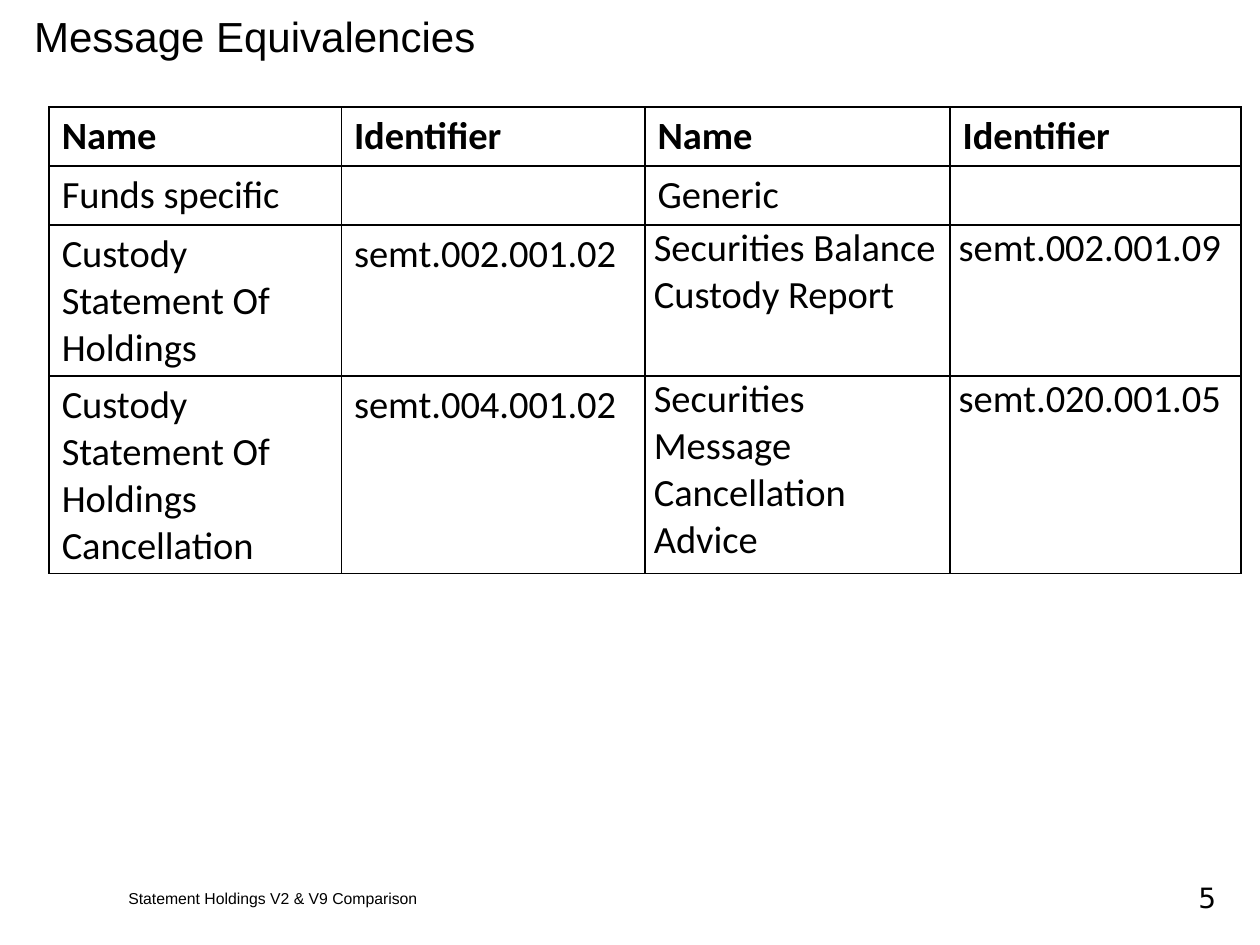
from lxml.etree import SubElement
from pptx import Presentation
from pptx.dml.color import RGBColor
from pptx.enum.text import MSO_ANCHOR, PP_ALIGN
from pptx.oxml.ns import qn
from pptx.util import Inches, Pt

BLACK = RGBColor(0x00, 0x00, 0x00)
WHITE = RGBColor(0xFF, 0xFF, 0xFF)
SLIDE_WIDTH, SLIDE_HEIGHT = Inches(10), Inches(7.5)
COLUMN_WIDTHS = (2.32, 2.41, 2.42, 2.31)
ROW_HEIGHT = 0.41
GENERIC_COLUMN = 2
FIRST_MESSAGE_ROW = 2
EQUIVALENCIES = (
    ("Name", "Identifier", "Name", "Identifier"),
    ("Funds specific", "", "Generic", ""),
    ("Custody Statement Of Holdings", "semt.002.001.02",
     "Securities Balance Custody Report", "semt.002.001.09"),
    ("Custody Statement Of Holdings Cancellation", "semt.004.001.02",
     "Securities Message Cancellation Advice", "semt.020.001.05"),
)


def add_run(paragraph, wording, font_name, size, bold=False):
    """Append one formatted run to a paragraph."""
    run = paragraph.add_run()
    run.text = wording
    run.font.name = font_name
    run.font.size = Pt(size)
    run.font.bold = bold
    run.font.color.rgb = BLACK


def place_title(slide, box, wording):
    """Move the title placeholder to the box and write the heading."""
    title = slide.shapes.title
    title.left, title.top, title.width, title.height = map(Inches, box)
    frame = title.text_frame
    frame.word_wrap = True
    frame.vertical_anchor = MSO_ANCHOR.TOP
    frame.margin_top = Inches(0.08)
    heading = frame.paragraphs[0]
    heading.alignment = PP_ALIGN.LEFT
    add_run(heading, wording, "Arial", 24)


def place_footer_text(slide, box, wording, font_name, size, alignment):
    """Write one vertically centred footer line in the box."""
    footer = slide.shapes.add_textbox(*map(Inches, box))
    frame = footer.text_frame
    frame.word_wrap = True
    frame.vertical_anchor = MSO_ANCHOR.MIDDLE
    line = frame.paragraphs[0]
    line.alignment = alignment
    add_run(line, wording, font_name, size)


def draw_borders(cell):
    """Give a cell thin black lines on all sides and a white fill."""
    properties = cell._tc.get_or_add_tcPr()
    for side in ("a:lnL", "a:lnR", "a:lnT", "a:lnB"):
        border = SubElement(properties, qn(side), w=str(Pt(1)))
        fill = SubElement(border, qn("a:solidFill"))
        SubElement(fill, qn("a:srgbClr"), val=str(BLACK))
    cell.fill.solid()
    cell.fill.fore_color.rgb = WHITE


def place_equivalencies(slide, left, top):
    """Build the message table with its top left corner at the given point."""
    table = slide.shapes.add_table(
        len(EQUIVALENCIES), len(COLUMN_WIDTHS), Inches(left), Inches(top),
        Inches(sum(COLUMN_WIDTHS)), Inches(ROW_HEIGHT * len(EQUIVALENCIES)),
    ).table
    table.horz_banding = False
    for column, width in zip(table.columns, COLUMN_WIDTHS):
        column.width = Inches(width)
    for row_index, entries in enumerate(EQUIVALENCIES):
        table.rows[row_index].height = Inches(ROW_HEIGHT)
        for column_index, wording in enumerate(entries):
            cell = table.cell(row_index, column_index)
            draw_borders(cell)
            if row_index >= FIRST_MESSAGE_ROW and column_index >= GENERIC_COLUMN:
                cell.margin_left = cell.margin_right = Inches(0.07)
                cell.margin_top = cell.margin_bottom = 0
                cell.text_frame.paragraphs[0].space_after = Pt(2)
            if wording:
                add_run(cell.text_frame.paragraphs[0], wording,
                        "Calibri", 22, row_index == 0)


def main():
    """Assemble and save the slide."""
    presentation = Presentation()
    presentation.slide_width = SLIDE_WIDTH
    presentation.slide_height = SLIDE_HEIGHT
    slide = presentation.slides.add_slide(presentation.slide_layouts[5])
    place_title(slide, (0.17, 0, 9.73, 0.56), "Message Equivalencies")
    place_footer_text(slide, (0.92, 7, 6.21, 0.25),
                      "Statement Holdings V2 & V9 Comparison",
                      "Arial", 9, PP_ALIGN.LEFT)
    place_footer_text(slide, (8.92, 7, 0.83, 0.25), "5",
                      "DejaVu Sans", 16, PP_ALIGN.RIGHT)
    place_equivalencies(slide, 0.39, 0.85)
    presentation.save("out.pptx")


if __name__ == "__main__":
    main()
